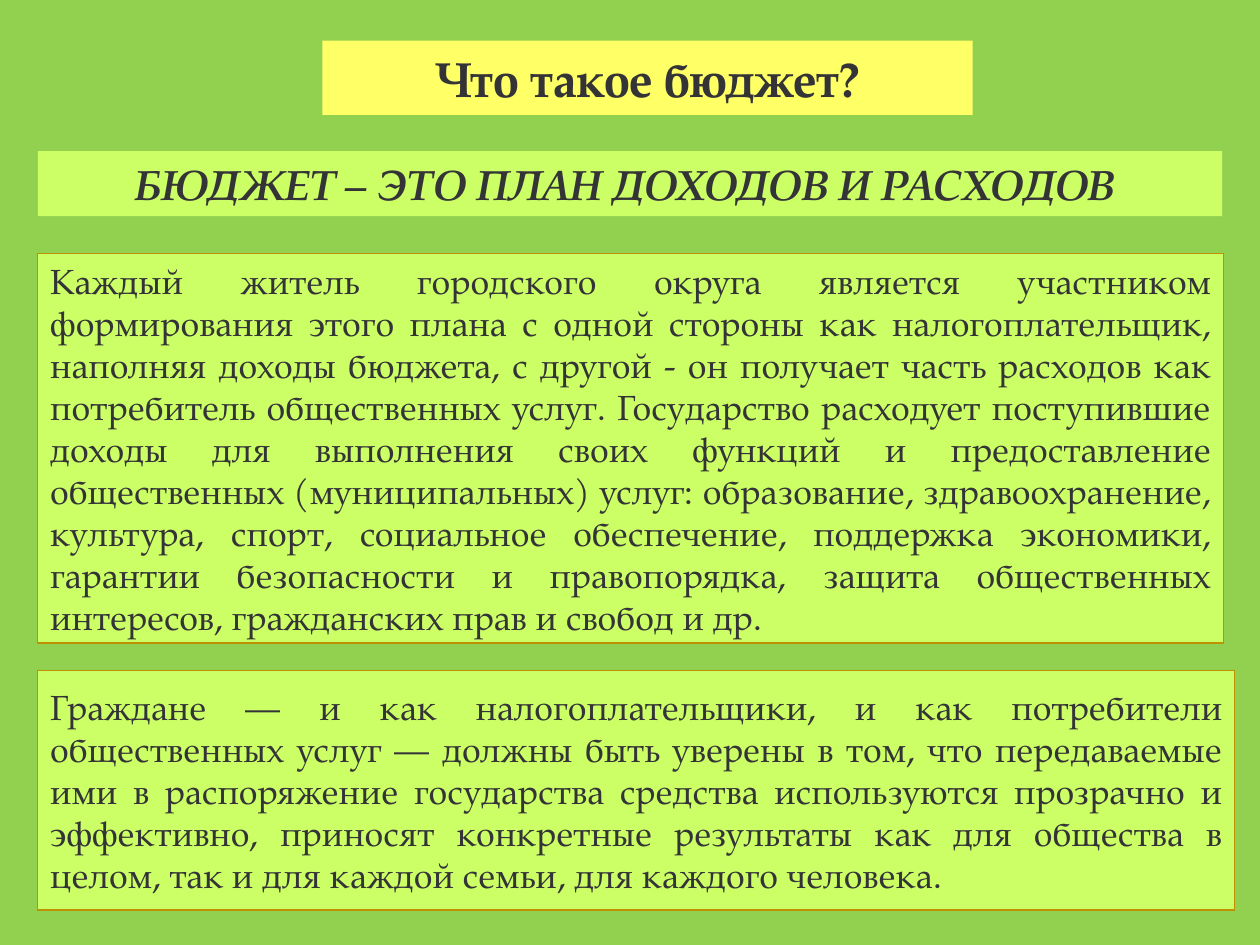
import dataclasses

import pptx
import pptx.dml.color
import pptx.enum.shapes
import pptx.enum.text
import pptx.util

Align = pptx.enum.text.PP_ALIGN


@dataclasses.dataclass(frozen=True)
class Theme:
    font: str = "TeX Gyre Pagella"
    background: str = "92D050"
    title_fill: str = "FFFF66"
    panel_fill: str = "CCFF66"
    border: str = "BF9000"
    text: str = "343437"
    title_size: int = 28
    heading_size: int = 24
    body_size: int = 20


def rgb(value):
    return pptx.dml.color.RGBColor.from_string(value)


class PageBuilder:
    def __init__(self, page, theme):
        self.page = page
        self.theme = theme

    def background(self):
        fill = self.page.background.fill
        fill.solid()
        fill.fore_color.rgb = rgb(self.theme.background)

    def panel(self, area, text, fill, size, align, bordered=False, bold=False, italic=False):
        """Add a filled rectangle with one paragraph; area is in points."""
        box = self.page.shapes.add_shape(
            pptx.enum.shapes.MSO_SHAPE.RECTANGLE, *map(pptx.util.Pt, area))
        box.shadow.inherit = False
        box.fill.solid()
        box.fill.fore_color.rgb = rgb(fill)
        if bordered:
            box.line.color.rgb = rgb(self.theme.border)
            box.line.width = pptx.util.Pt(0.75)
        else:
            box.line.fill.background()

        frame = box.text_frame
        frame.word_wrap = True
        frame.vertical_anchor = pptx.enum.text.MSO_ANCHOR.MIDDLE
        frame.text = text
        para = frame.paragraphs[0]
        para.alignment = align
        for span in para.runs:
            span.font.name = self.theme.font
            span.font.size = pptx.util.Pt(size)
            span.font.bold = bold
            span.font.italic = italic
            span.font.color.rgb = rgb(self.theme.text)

    def title(self, area, text):
        self.panel(area, text, self.theme.title_fill, self.theme.title_size,
                   Align.CENTER, bold=True)

    def heading(self, area, text):
        self.panel(area, text, self.theme.panel_fill, self.theme.heading_size,
                   Align.CENTER, bold=True, italic=True)

    def body(self, area, text):
        self.panel(area, text, self.theme.panel_fill, self.theme.body_size,
                   Align.JUSTIFY, bordered=True)


def main():
    deck = pptx.Presentation()
    deck.slide_width = pptx.util.Pt(720)
    deck.slide_height = pptx.util.Pt(540)
    builder = PageBuilder(deck.slides.add_slide(deck.slide_layouts[6]), Theme())
    builder.background()
    left = 21.6

    # Definition
    builder.heading((left, 86.4, 676.8, 37.2), "БЮДЖЕТ – ЭТО ПЛАН ДОХОДОВ И РАСХОДОВ ")

    # Explanations
    builder.body(
        (left, 145, 677.5, 222.5),
        "Каждый житель городского округа является участником формирования этого плана "
        "с одной стороны как налогоплательщик, наполняя доходы бюджета, с другой - он "
        "получает часть расходов как потребитель общественных услуг. Государство "
        "расходует поступившие доходы для выполнения своих функций и предоставление "
        "общественных (муниципальных) услуг: образование, здравоохранение, культура, "
        "спорт, социальное обеспечение, поддержка экономики, гарантии безопасности и "
        "правопорядка, защита общественных интересов, гражданских прав и свобод и др. ")
    builder.body(
        (left, 383, 684, 137),
        "Граждане — и как налогоплательщики, и как потребители общественных услуг — "
        "должны быть уверены в том, что передаваемые ими в распоряжение государства "
        "средства используются прозрачно и эффективно, приносят конкретные результаты "
        "как для общества в целом, так и для каждой семьи, для каждого человека. ")

    # Title
    builder.title((184.3, 23.2, 371.5, 42.5), "Что такое бюджет?")

    deck.save("out.pptx")


if __name__ == "__main__":
    main()
